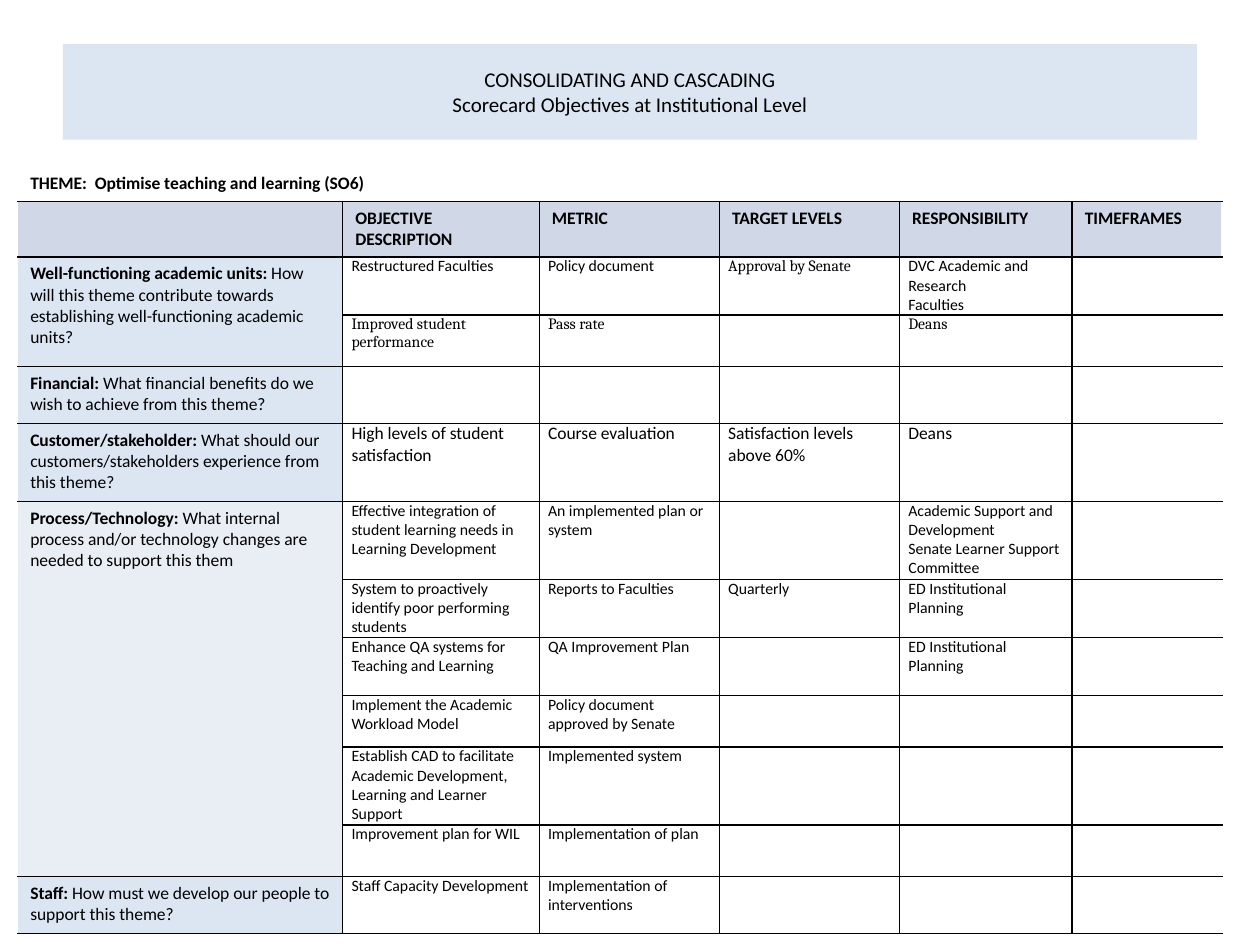
from lxml import etree
from pptx import Presentation
from pptx.dml.color import RGBColor
from pptx.enum import shapes, text
from pptx.oxml import ns
from pptx.util import Inches, Pt

BLACK = RGBColor(0x00, 0x00, 0x00)
WHITE = RGBColor(0xFF, 0xFF, 0xFF)
PALE_BLUE = RGBColor(0xDC, 0xE6, 0xF2)
HEADER_BLUE = RGBColor(0xD0, 0xD8, 0xE8)
PALE_GREY = RGBColor(0xE9, 0xED, 0xF4)

TITLE = ["CONSOLIDATING AND CASCADING", "Scorecard Objectives at Institutional Level"]
THEME = "THEME:  Optimise teaching and learning (SO6)"
HEADERS = ["", "OBJECTIVE DESCRIPTION", "METRIC", "TARGET LEVELS",
           "RESPONSIBILITY", "TIMEFRAMES"]
COLUMN_WIDTHS = [2.58, 1.56, 1.43, 1.43, 1.37, 1.19]
ROW_HEIGHTS = [0.45, 0.44, 0.46, 0.41, 0.45, 0.62, 0.62,
               0.46, 0.46, 0.41, 0.62, 0.41, 0.45]

# Perspective, question, fill, text size of the entries, and one list per row:
# objective, metric, target, responsibility
PERSPECTIVES = [
    ("Well-functioning academic units: ",
     "How will this theme contribute towards establishing well-functioning academic units?",
     PALE_BLUE, 9, [
         ["Restructured Faculties", "Policy document", "Approval by Senate",
          "DVC Academic and Research\nFaculties"],
         ["Improved student performance", "Pass rate", "", "Deans"]]),
    ("Financial: ", "What financial benefits do we wish to achieve from this theme?",
     PALE_BLUE, 10, [["", "", "", ""]]),
    ("Customer/stakeholder: ",
     "What should our customers/stakeholders experience from this theme?",
     PALE_BLUE, 10, [
         ["High levels of student satisfaction", "Course evaluation",
          "Satisfaction levels above 60%", "Deans"]]),
    ("Process/Technology: ",
     "What internal process and/or technology changes are needed to support this them",
     PALE_GREY, 9, [
         ["Effective integration of student learning needs in Learning Development",
          "An implemented plan or system", "",
          "Academic Support and Development\nSenate Learner Support Committee"],
         ["System to proactively identify poor performing students",
          "Reports to Faculties", "Quarterly", "ED Institutional Planning"],
         ["Enhance QA systems for Teaching and Learning", "QA Improvement Plan", "",
          "ED Institutional Planning"],
         ["Implement the Academic Workload Model",
          "Policy document approved by Senate", "", ""],
         ["Establish CAD to facilitate Academic Development, Learning and Learner Support",
          "Implemented system", "", ""],
         ["Improvement plan for WIL", "Implementation of plan", "", ""]]),
    ("Staff: ", "How must we develop our people to support this theme?",
     PALE_BLUE, 9, [
         ["Staff Capacity Development", "Implementation of interventions", "", ""]]),
]
CAMBRIA_CELLS = {(2, 3), (3, 1), (3, 2), (3, 4)}  # (table row, column)


def add_run(paragraph, words, size, bold=False, font="Calibri"):
    run = paragraph.add_run()
    run.text = words
    run.font.size = Pt(size)
    run.font.bold = bold
    run.font.name = font
    run.font.color.rgb = BLACK


def set_border(cell, side, color):
    """Draw one side (L, R, T or B) of a cell as a 1 pt line."""
    properties = cell._tc.get_or_add_tcPr()
    line = etree.SubElement(properties, ns.qn(f"a:ln{side}"), w=str(Pt(1)))
    fill = etree.SubElement(line, ns.qn("a:solidFill"))
    etree.SubElement(fill, ns.qn("a:srgbClr"), val=str(color))


def style_grid(table):
    """Black inner and bottom lines, white outer sides and theme row, no cell fill."""
    last_column = len(table.columns) - 1
    for row_index, row in enumerate(table.rows):
        for column_index, cell in enumerate(row.cells):
            in_theme = row_index == 0
            set_border(cell, "L", WHITE if in_theme or column_index == 0 else BLACK)
            set_border(cell, "R", WHITE if in_theme or column_index == last_column else BLACK)
            set_border(cell, "T", WHITE if in_theme else BLACK)
            set_border(cell, "B", BLACK)
            cell.fill.background()


def fill_cell(cell, color):
    cell.fill.solid()
    cell.fill.fore_color.rgb = color


def write_entry(cell, entry, size, font):
    cell.margin_left = cell.margin_right = Inches(0.07)
    cell.margin_top = cell.margin_bottom = 0
    frame = cell.text_frame
    for index, words in enumerate(entry.split("\n")):
        paragraph = frame.add_paragraph() if index else frame.paragraphs[0]
        add_run(paragraph, words, size, font=font)


def add_perspective(table, first_row, name, question, color, size, entries):
    label = table.cell(first_row, 0)
    if len(entries) > 1:
        label.merge(table.cell(first_row + len(entries) - 1, 0))
    fill_cell(label, color)
    paragraph = label.text_frame.paragraphs[0]
    add_run(paragraph, name, 10, bold=True)
    add_run(paragraph, question, 10)
    for row, row_entries in enumerate(entries, first_row):
        for column, entry in enumerate(row_entries, 1):
            if entry:
                font = "Cambria" if (row, column) in CAMBRIA_CELLS else "Calibri"
                write_entry(table.cell(row, column), entry, size, font)


def add_scorecard(slide, left, top, width, height):
    frame = slide.shapes.add_table(len(ROW_HEIGHTS), len(COLUMN_WIDTHS),
                                   left, top, width, height)
    table = frame.table
    table.first_row = table.horz_banding = False
    for column, column_width in zip(table.columns, COLUMN_WIDTHS):
        column.width = Inches(column_width)
    for row, row_height in zip(table.rows, ROW_HEIGHTS):
        row.height = Inches(row_height)
    style_grid(table)

    theme = table.cell(0, 0)
    theme.merge(table.cell(0, len(COLUMN_WIDTHS) - 1))
    theme.margin_top = Inches(0.22)
    add_run(theme.text_frame.paragraphs[0], THEME, 10, bold=True)

    for column, header in enumerate(HEADERS):
        cell = table.cell(1, column)
        fill_cell(cell, HEADER_BLUE)
        if header:
            add_run(cell.text_frame.paragraphs[0], header, 10, bold=True)

    first_row = 2
    for perspective in PERSPECTIVES:
        add_perspective(table, first_row, *perspective)
        first_row += len(perspective[-1])


def add_title(slide, left, top, width, height):
    banner = slide.shapes.add_shape(shapes.MSO_SHAPE.RECTANGLE, left, top, width, height)
    banner.shadow.inherit = False
    banner.fill.solid()
    banner.fill.fore_color.rgb = PALE_BLUE
    banner.line.fill.background()
    frame = banner.text_frame
    frame.word_wrap = True
    frame.vertical_anchor = text.MSO_ANCHOR.MIDDLE
    paragraph = frame.paragraphs[0]
    paragraph.alignment = text.PP_ALIGN.CENTER
    for index, words in enumerate(TITLE):
        if index:
            paragraph.add_line_break()
        add_run(paragraph, words, 12)


def main():
    presentation = Presentation()
    presentation.slide_width = Inches(10)
    presentation.slide_height = Inches(7.5)
    slide = presentation.slides.add_slide(presentation.slide_layouts[6])
    add_scorecard(slide, Inches(0.14), Inches(1.15), Inches(9.57), Inches(6.22))
    add_title(slide, Inches(0.5), Inches(0.35), Inches(9), Inches(0.76))
    presentation.save("out.pptx")


if __name__ == "__main__":
    main()
